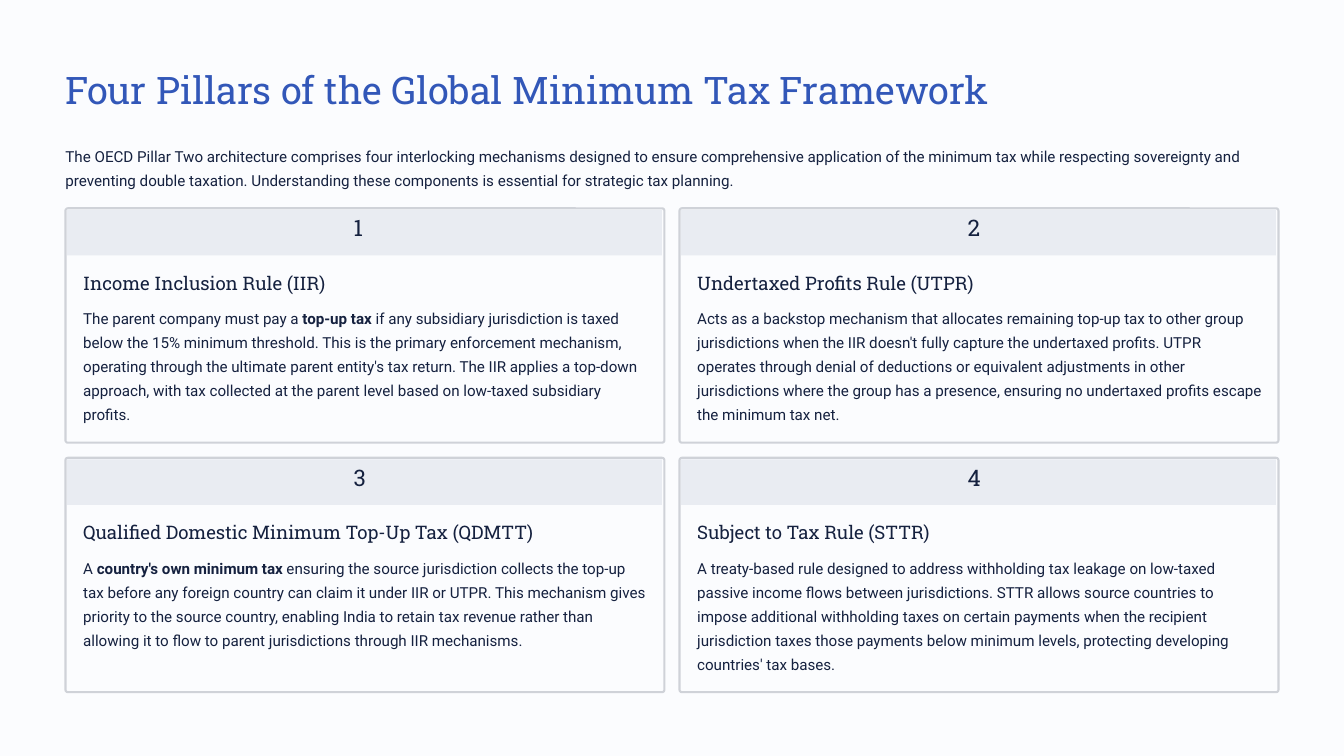
"""Build the slide on the four pillars of the global minimum tax."""
from pptx import Presentation
from pptx import util as u
from pptx.dml.color import RGBColor
from pptx.enum import shapes, text

SERIF, SANS = "Roboto Slab", "Roboto"
PAPER, INK, BLUE, BAND, BORDER = "FBFCFE", "15213F", "3257B8", "E9ECF2", "CFD2D8"
LEFT, TOP = 0.78, 2.48
CARD_WIDTH, CARD_HEIGHT = 7.13, 2.79
COLUMN_STEP, ROW_STEP = 7.31, 2.97

TITLE = "Four Pillars of the Global Minimum Tax Framework"
INTRO = (
    "The OECD Pillar Two architecture comprises four interlocking mechanisms designed to "
    "ensure comprehensive application of the minimum tax while respecting sovereignty and "
    "preventing double taxation. Understanding these components is essential for strategic "
    "tax planning."
)
PILLARS = [
    ("Income Inclusion Rule (IIR)", [
        "The parent company must pay a ",
        "top-up tax",
        " if any subsidiary jurisdiction is taxed below the 15% minimum threshold. This is the "
        "primary enforcement mechanism, operating through the ultimate parent entity's tax "
        "return. The IIR applies a top-down approach, with tax collected at the parent level "
        "based on low-taxed subsidiary profits.",
    ]),
    ("Undertaxed Profits Rule (UTPR)", [
        "Acts as a backstop mechanism that allocates remaining top-up tax to other group "
        "jurisdictions when the IIR doesn't fully capture the undertaxed profits. UTPR operates "
        "through denial of deductions or equivalent adjustments in other jurisdictions where "
        "the group has a presence, ensuring no undertaxed profits escape the minimum tax net.",
    ]),
    ("Qualified Domestic Minimum Top-Up Tax (QDMTT)", [
        "A ",
        "country's own minimum tax",
        " ensuring the source jurisdiction collects the top-up tax before any foreign country "
        "can claim it under IIR or UTPR. This mechanism gives priority to the source country, "
        "enabling India to retain tax revenue rather than allowing it to flow to parent "
        "jurisdictions through IIR mechanisms.",
    ]),
    ("Subject to Tax Rule (STTR)", [
        "A treaty-based rule designed to address withholding tax leakage on low-taxed passive "
        "income flows between jurisdictions. STTR allows source countries to impose additional "
        "withholding taxes on certain payments when the recipient jurisdiction taxes those "
        "payments below minimum levels, protecting developing countries' tax bases.",
    ]),
]


def color(value):
    """Turn a hex string into a colour."""
    return RGBColor.from_string(value)


def write(frame, pieces, *, size, spacing, font=SANS, ink=INK, wrap=True):
    """Fill a text frame with one paragraph whose every second piece is bold."""
    frame.margin_left = frame.margin_right = frame.margin_top = frame.margin_bottom = 0
    frame.auto_size = text.MSO_AUTO_SIZE.NONE
    frame.vertical_anchor = text.MSO_ANCHOR.TOP
    frame.word_wrap = wrap
    paragraph = frame.paragraphs[0]
    paragraph.alignment = text.PP_ALIGN.LEFT
    paragraph.line_spacing = u.Pt(spacing)
    for position, piece in enumerate(pieces):
        run = paragraph.add_run()
        run.text = piece
        run.font.size = u.Pt(size)
        run.font.name = font
        run.font.bold = position % 2 == 1
        run.font.color.rgb = color(ink)


def add_text(slide, box, pieces, **style):
    """Add a text box at the given left, top, width and height."""
    label = slide.shapes.add_textbox(*map(u.Inches, box))
    write(label.text_frame, pieces, **style)


def add_panel(slide, kind, box, fill, border=None):
    """Add a filled shape with an optional border."""
    panel = slide.shapes.add_shape(kind, *map(u.Inches, box))
    panel.shadow.inherit = False
    panel.fill.solid()
    panel.fill.fore_color.rgb = color(fill)
    if border:
        panel.line.color.rgb = color(border)
        panel.line.width = u.Pt(1.8)
    else:
        panel.line.fill.background()
    return panel


def add_pillar(slide, index, heading, body):
    """Add one numbered pillar card at its place in the two-by-two grid."""
    row, column = divmod(index, 2)
    left, top = LEFT + column * COLUMN_STEP, TOP + row * ROW_STEP
    card = add_panel(slide, shapes.MSO_SHAPE.ROUNDED_RECTANGLE,
                     (left, top, CARD_WIDTH, CARD_HEIGHT), PAPER, BORDER)
    card.adjustments[0] = 0.01
    add_panel(slide, shapes.MSO_SHAPE.RECTANGLE, (left + 0.02, top + 0.02, 7.08, 0.54), BAND)
    add_text(slide, (left + 3.43, top + 0.12, 0.27, 0.34), [str(index + 1)],
             size=19.5, spacing=19.5, font=SERIF, wrap=False)
    add_text(slide, (left + 0.21, top + 0.74, 6.72, 0.28), [heading],
             size=16, spacing=20, font=SERIF, wrap=False)
    add_text(slide, (left + 0.21, top + 1.14, 6.72, 1.45), body, size=13, spacing=20.5)


def main():
    """Build and save the slide."""
    deck = Presentation()
    deck.slide_width, deck.slide_height = u.Inches(16), u.Inches(9)
    slide = deck.slides.add_slide(deck.slide_layouts[5])
    slide.background.fill.solid()
    slide.background.fill.fore_color.rgb = color(PAPER)
    title = slide.shapes.title
    title.left, title.top = u.Inches(LEFT), u.Inches(0.77)
    title.width, title.height = u.Inches(11.02), u.Inches(0.57)
    write(title.text_frame, [TITLE], size=32.5, spacing=40.5, font=SERIF, ink=BLUE, wrap=False)
    add_text(slide, (LEFT, 1.69, 14.44, 0.58), [INTRO], size=13, spacing=20.5)
    for index, (heading, body) in enumerate(PILLARS):
        add_pillar(slide, index, heading, body)
    deck.save("out.pptx")


if __name__ == "__main__":
    main()
